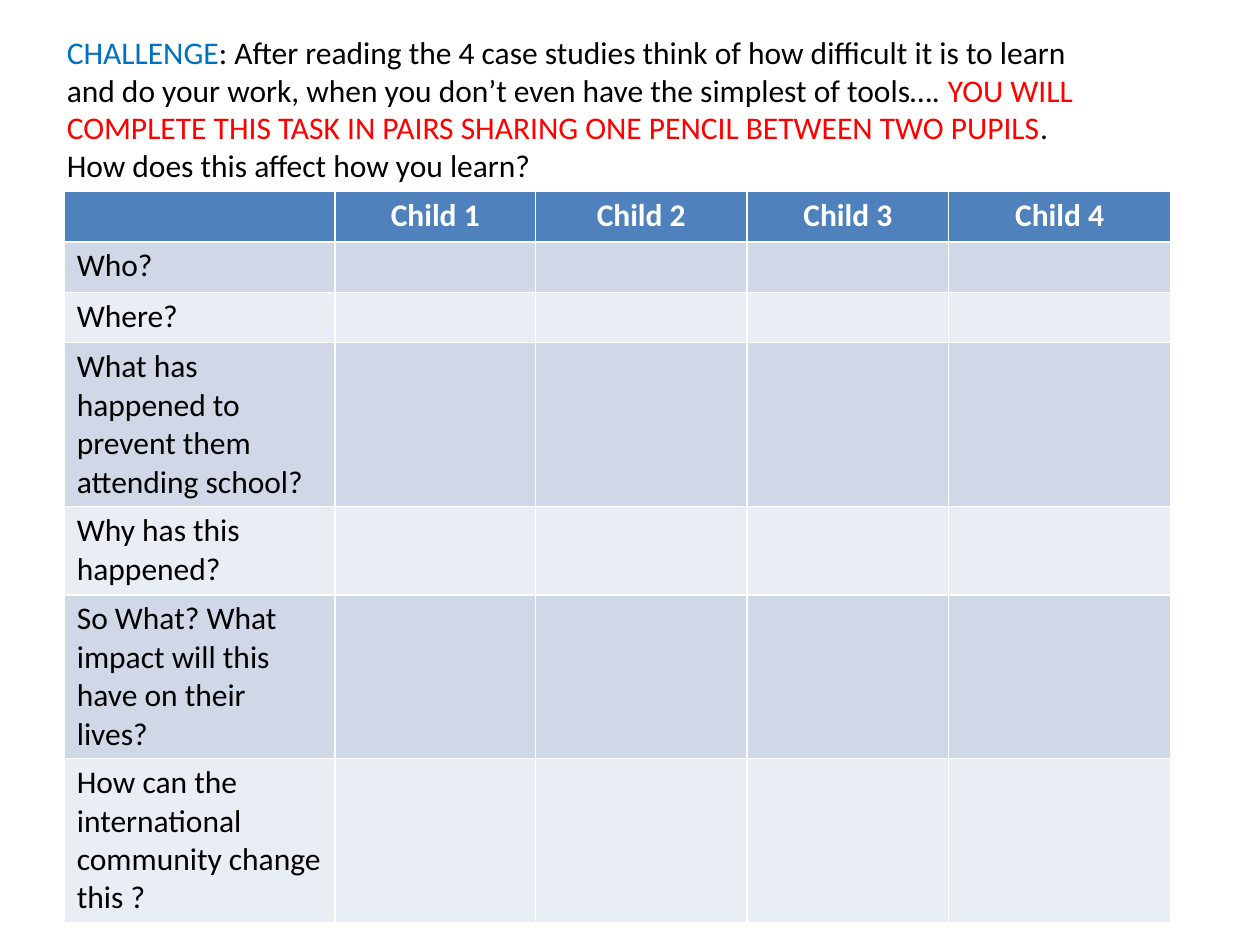
"""Build a worksheet slide comparing four children's case studies."""
from pptx import Presentation
from pptx.dml.color import RGBColor
from pptx.enum import text
from pptx.util import Inches, Pt

COLOURS = {
    "blue": "0070C0", "black": "000000", "red": "FF0000", "white": "FFFFFF",
    "header": "4F81BD", "odd": "D0D8E8", "even": "E9EDF4",
}
CHALLENGE = [
    ("CHALLENGE", "blue"),
    (": After reading the 4 case studies think of how difficult it is to learn and do "
     "your work, when you don’t even have the simplest of tools…. ", "black"),
    ("YOU WILL COMPLETE THIS TASK IN PAIRS SHARING ONE PENCIL BETWEEN TWO PUPILS", "red"),
    (". How does this affect how you learn?", "black"),
]
CHILDREN = ["Child 1", "Child 2", "Child 3", "Child 4"]
QUESTIONS = [
    ("Who?", 1),
    ("Where?", 1),
    ("What has happened to prevent them attending school?", 4),
    ("Why has this happened?", 2),
    ("So What? What impact will this have on their lives?", 4),
    ("How can the international community change this ?", 4),
]
COLUMN_WIDTHS = [2.15, 1.59, 1.68, 1.6, 1.76]
LINE_HEIGHT, ROW_PADDING = 0.3, 0.1


def colour(name):
    return RGBColor.from_string(COLOURS[name])


def add_run(paragraph, wording, ink, bold=False):
    run = paragraph.add_run()
    run.text = wording
    run.font.name, run.font.size, run.font.bold = "Calibri", Pt(18), bold
    run.font.color.rgb = colour(ink)


def add_challenge(slide):
    title = slide.shapes.title
    title.left, title.top = Inches(0.43), Inches(0.21)
    title.width, title.height = Inches(8.43), Inches(1.31)
    frame = title.text_frame
    frame.word_wrap = True
    frame.auto_size = text.MSO_AUTO_SIZE.NONE
    frame.vertical_anchor = text.MSO_ANCHOR.TOP
    paragraph = frame.paragraphs[0]
    paragraph.alignment = text.PP_ALIGN.LEFT
    for wording, ink in CHALLENGE:
        add_run(paragraph, wording, ink)


def add_worksheet(slide):
    rows = [["", *CHILDREN]] + [[question] + [""] * len(CHILDREN) for question, _ in QUESTIONS]
    heights = [lines * LINE_HEIGHT + ROW_PADDING for lines in [1] + [n for _, n in QUESTIONS]]
    worksheet = slide.shapes.add_table(
        len(rows), len(COLUMN_WIDTHS), Inches(0.51), Inches(1.52),
        Inches(sum(COLUMN_WIDTHS)), Inches(sum(heights))).table
    for column, width in zip(worksheet.columns, COLUMN_WIDTHS):
        column.width = Inches(width)
    for r, (wordings, height) in enumerate(zip(rows, heights)):
        worksheet.rows[r].height = Inches(height)
        is_header = r == 0
        band = "header" if is_header else "odd" if r % 2 else "even"
        for c, wording in enumerate(wordings):
            cell = worksheet.cell(r, c)
            cell.fill.solid()
            cell.fill.fore_color.rgb = colour(band)
            cell.margin_top = cell.margin_bottom = Inches(0.04)
            paragraph = cell.text_frame.paragraphs[0]
            paragraph.font.size = Pt(18)
            if is_header:
                paragraph.alignment = text.PP_ALIGN.CENTER
            if wording:
                add_run(paragraph, wording, "white" if is_header else "black", is_header)


def main():
    deck = Presentation()
    deck.slide_width, deck.slide_height = Inches(10), Inches(7.5)
    slide = deck.slides.add_slide(deck.slide_layouts[5])
    add_challenge(slide)
    add_worksheet(slide)
    deck.save("out.pptx")


if __name__ == "__main__":
    main()
